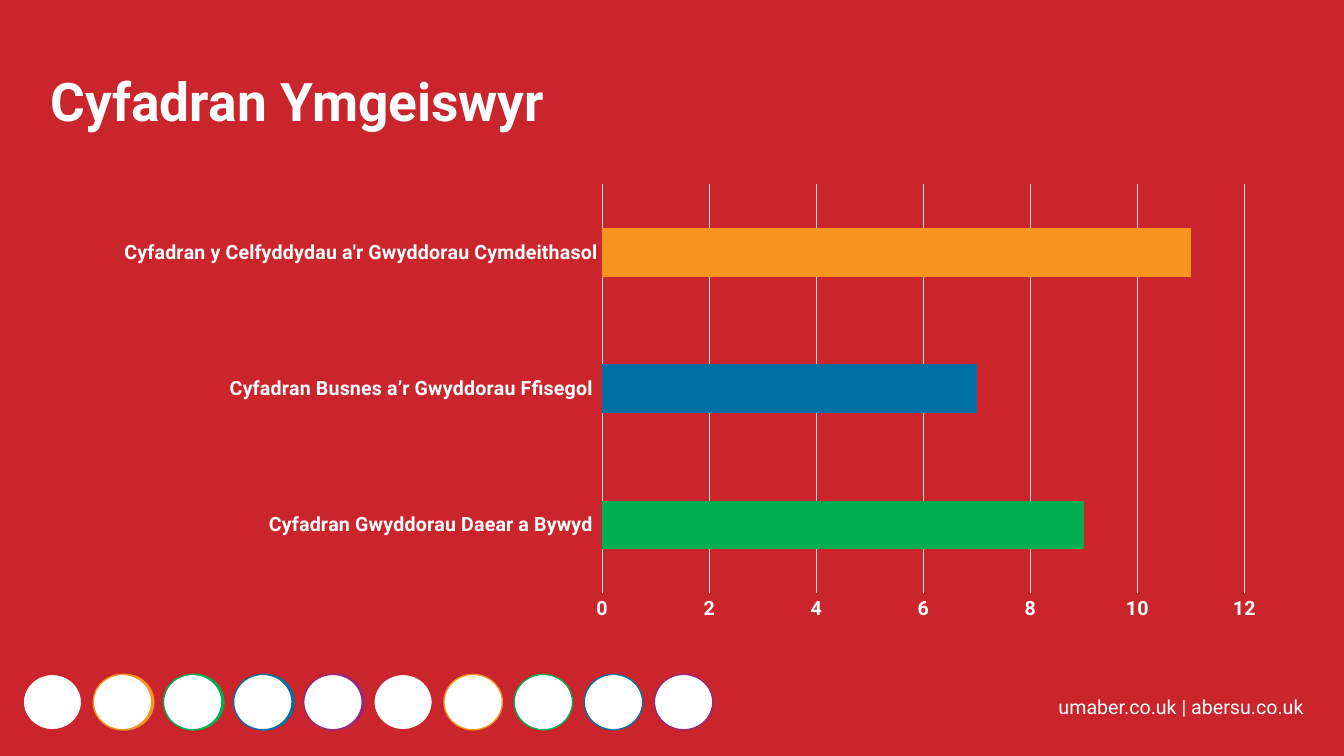
from dataclasses import dataclass

import pptx
import pptx.chart.data
import pptx.dml.color
import pptx.enum.chart
import pptx.enum.shapes
import pptx.enum.text
import pptx.util

Inches = pptx.util.Inches
Pt = pptx.util.Pt
RGBColor = pptx.dml.color.RGBColor


@dataclass(frozen=True)
class Theme:
    font: str = "Roboto"
    red: str = "CA252C"
    orange: str = "F7941F"
    green: str = "00AF50"
    blue: str = "0171A3"
    purple: str = "95277D"
    white: str = "FFFFFF"
    grid: str = "D9D9D9"
    title_size: int = 38
    text_size: int = 14


@dataclass(frozen=True)
class Faculty:
    name: str
    candidates: int
    color: str


@dataclass(frozen=True)
class DotRow:
    left: float
    count: int
    fill: str | None


THEME = Theme()
DOT_COLORS = [THEME.red, THEME.orange, THEME.green, THEME.blue, THEME.purple]
DOT_STEP = (6.49 - 0.23) / 9
DOT_ROWS = [DotRow(0.25, 5, None), DotRow(0.23, 10, THEME.white)]
FACULTIES = [
    Faculty("Cyfadran Gwyddorau Daear a Bywyd ", 9, THEME.green),
    Faculty("Cyfadran Busnes a’r Gwyddorau Ffisegol ", 7, THEME.blue),
    Faculty("Cyfadran y Celfyddydau a'r Gwyddorau Cymdeithasol", 11, THEME.orange),
]


def rgb(color: str) -> RGBColor:
    return RGBColor.from_string(color)


def style_font(font, size: int, bold: bool) -> None:
    font.name = THEME.font
    font.size = Pt(size)
    font.bold = bold
    font.color.rgb = rgb(THEME.white)


def style_line(line) -> None:
    line.color.rgb = rgb(THEME.grid)
    line.width = Pt(0.75)


def draw_dots(slide, row: DotRow) -> None:
    for index in range(row.count):
        color = DOT_COLORS[index % len(DOT_COLORS)]
        dot = slide.shapes.add_shape(
            pptx.enum.shapes.MSO_SHAPE.OVAL,
            Inches(row.left + index * DOT_STEP), Inches(6.69), Inches(0.58), Inches(0.55),
        )
        dot.shadow.inherit = False
        dot.fill.solid()
        dot.fill.fore_color.rgb = rgb(row.fill or color)
        dot.line.color.rgb = rgb(color)
        dot.line.width = Pt(1)


def draw_title(slide) -> None:
    title = slide.shapes.title
    title.left, title.top = Inches(0.4), Inches(0.7)
    title.width, title.height = Inches(11.42), Inches(0.88)
    frame = title.text_frame
    frame.text = "Cyfadran Ymgeiswyr"
    frame.vertical_anchor = pptx.enum.text.MSO_ANCHOR.TOP
    frame.auto_size = pptx.enum.text.MSO_AUTO_SIZE.NONE
    heading = frame.paragraphs[0]
    heading.alignment = pptx.enum.text.PP_ALIGN.LEFT
    heading.line_spacing = 0.9
    style_font(heading.runs[0].font, THEME.title_size, True)


def draw_websites(slide) -> None:
    websites = slide.shapes.add_textbox(Inches(10.4), Inches(6.84), Inches(2.8), Inches(0.34))
    websites.text_frame.word_wrap = True
    websites.text_frame.text = "umaber.co.uk | abersu.co.uk"
    style_font(websites.text_frame.paragraphs[0].runs[0].font, THEME.text_size, False)


def draw_faculty_chart(slide) -> None:
    data = pptx.chart.data.CategoryChartData()
    data.categories = [faculty.name for faculty in FACULTIES]
    data.add_series("Series 1", [faculty.candidates for faculty in FACULTIES])
    chart = slide.shapes.add_chart(
        pptx.enum.chart.XL_CHART_TYPE.BAR_CLUSTERED,
        Inches(1), Inches(1.74), Inches(11.69), Inches(4.51), data,
    ).chart
    chart.has_title = False
    chart.has_legend = False
    style_font(chart.font, THEME.text_size, True)

    for axis in (chart.category_axis, chart.value_axis):
        axis.major_tick_mark = pptx.enum.chart.XL_TICK_MARK.NONE
        axis.minor_tick_mark = pptx.enum.chart.XL_TICK_MARK.NONE
        style_font(axis.tick_labels.font, THEME.text_size, True)
    style_line(chart.category_axis.format.line)
    scale = chart.value_axis
    scale.minimum_scale, scale.maximum_scale, scale.major_unit = 0, 12, 2
    scale.format.line.fill.background()
    scale.has_major_gridlines = True
    style_line(scale.major_gridlines.format.line)

    bars = chart.plots[0]
    bars.gap_width = 182
    bars.vary_by_categories = False
    for index, faculty in enumerate(FACULTIES):
        fill = bars.series[0].points[index].format.fill
        fill.solid()
        fill.fore_color.rgb = rgb(faculty.color)


def main() -> None:
    deck = pptx.Presentation()
    deck.slide_width, deck.slide_height = Inches(13.33), Inches(7.5)
    slide = deck.slides.add_slide(deck.slide_layouts.get_by_name("Title Only"))
    slide.background.fill.solid()
    slide.background.fill.fore_color.rgb = rgb(THEME.red)
    draw_websites(slide)
    for row in DOT_ROWS:
        draw_dots(slide, row)
    draw_title(slide)
    draw_faculty_chart(slide)
    deck.save("out.pptx")


if __name__ == "__main__":
    main()
